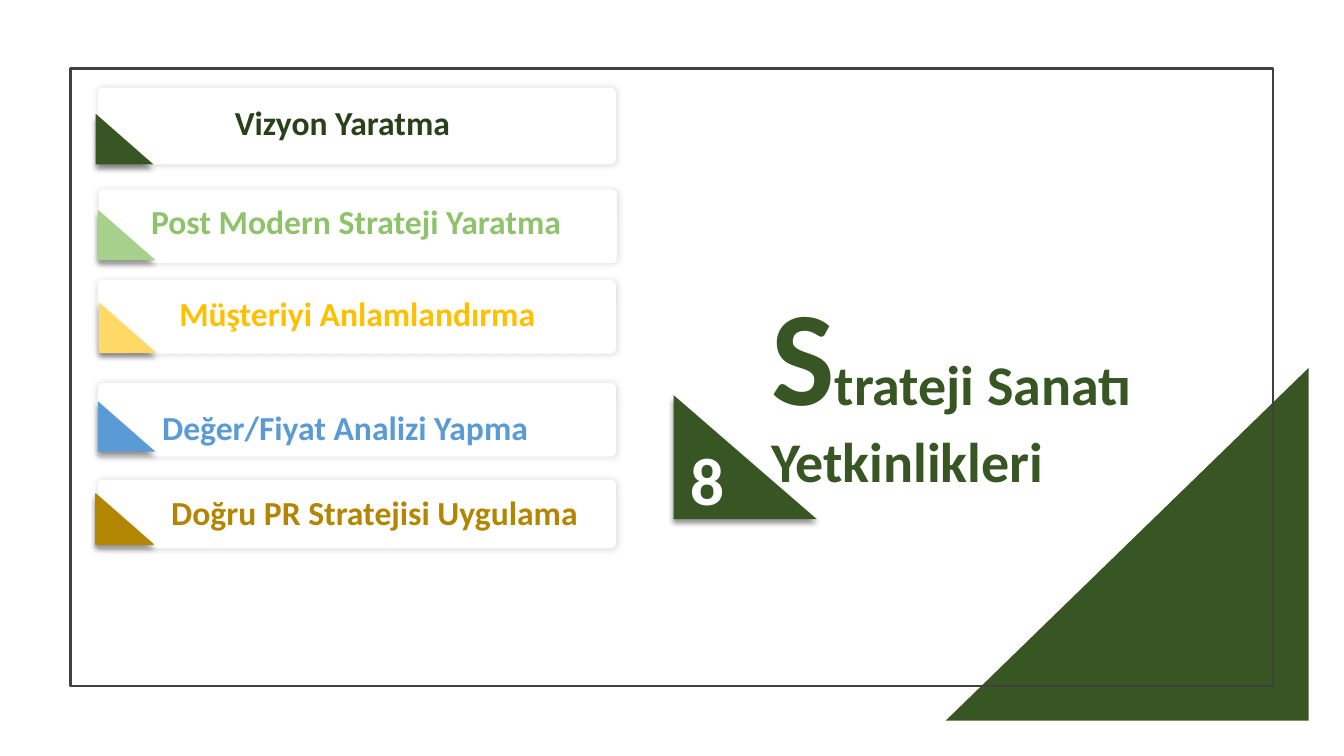
from lxml.etree import SubElement
from pptx import Presentation
from pptx.dml.color import RGBColor
from pptx.enum.shapes import MSO_SHAPE
from pptx.enum.text import MSO_ANCHOR
from pptx.oxml.ns import qn
from pptx.util import Inches, Pt

COLORS = {
    "white": "FFFFFF", "frame": "404040", "shadow": "000000",
    "forest": "375623", "dark_forest": "29401B",
    "light_green": "A8D08D", "green": "8EC36B",
    "light_yellow": "FFD965", "yellow": "FFC000",
    "blue": "5B9BD5", "ochre": "B28600",
}
BAR_GLOW = (14, 5, 0, 0)
DROP_SHADOW = (43, 4, 3, 90)
BAR_LEFT, BAR_WIDTH = 0.97, 5.14
CORNER_WIDTH, CORNER_HEIGHT = 0.57, 0.5

# label, text colour, corner colour, bar (left, top, height), corner (left, top), text (left, top, width)
SKILLS = [
    ("Vizyon Yaratma", "dark_forest", "forest",
     (0.97, 0.87, 0.76), (0.95, 1.13), (2.23, 0.96, 3.38)),
    ("Post Modern Strateji Yaratma", "green", "light_green",
     (0.98, 1.88, 0.73), (0.97, 2.08), (1.4, 1.94, 5.14)),
    ("Müşteriyi Anlamlandırma", "yellow", "light_yellow",
     (0.97, 2.78, 0.73), (0.98, 3.0), (1.68, 2.86, 4.1)),
    ("Değer/Fiyat Analizi Yapma", "blue", "blue",
     (0.97, 3.8, 0.73), (0.97, 3.98), (1.51, 3.99, 4.74)),
    ("Doğru PR Stratejisi Uygulama", "ochre", "ochre",
     (0.97, 4.76, 0.68), (0.95, 4.9), (1.6, 4.83, 4.4)),
]


def rgb(color):
    """Return the named colour."""
    return RGBColor.from_string(COLORS[color])


def add_shadow(shape, alpha, blur, distance, angle):
    """Give a shape an outer shadow, in percent, points and degrees."""
    effects = shape._element.spPr.find(qn("a:effectLst"))
    shadow = SubElement(effects, qn("a:outerShdw"), blurRad=str(Pt(blur)),
                        dist=str(Pt(distance)), dir=str(angle * 60000),
                        algn="ctr", rotWithShape="0")
    shade = SubElement(shadow, qn("a:srgbClr"), val=COLORS["shadow"])
    SubElement(shade, qn("a:alpha"), val=str(alpha * 1000))


def add_figure(slide, preset, box, fill=None, line=None, line_width=0.75, shadow=None):
    """Add a preset shape in the given box."""
    figure = slide.shapes.add_shape(preset, *map(Inches, box))
    figure.shadow.inherit = False
    if fill:
        figure.fill.solid()
        figure.fill.fore_color.rgb = rgb(fill)
    else:
        figure.fill.background()
    if line:
        figure.line.color.rgb = rgb(line)
        figure.line.width = Pt(line_width)
    else:
        figure.line.fill.background()
    if shadow:
        add_shadow(figure, *shadow)
    return figure


def add_text(slide, box, runs, color, anchor=MSO_ANCHOR.TOP, spacing=1.0):
    """Add one bold paragraph made of (text, size) runs."""
    frame = slide.shapes.add_textbox(*map(Inches, box)).text_frame
    frame.word_wrap = True
    frame.vertical_anchor = anchor
    paragraph = frame.paragraphs[0]
    paragraph.line_spacing = spacing
    for text, size in runs:
        run = paragraph.add_run()
        run.text = text
        run.font.name = "Calibri"
        run.font.size = Pt(size)
        run.font.bold = True
        run.font.color.rgb = rgb(color)


def add_backdrop(slide, left, top, width, height):
    """Draw the large corner triangle and the thin frame in the box."""
    corner = add_figure(slide, MSO_SHAPE.RIGHT_TRIANGLE,
                        (left + width - 3.25, top + height - 3.16, 3.6, 3.5), "forest")
    corner._element.spPr.xfrm.set("flipH", "1")
    add_figure(slide, MSO_SHAPE.RECTANGLE, (left, top, width, height),
               line="frame", line_width=1.5)


def add_skill(slide, label, text_color, corner_color, bar, corner, text):
    """Draw one skill bar with its corner triangle and label."""
    left, top, height = bar
    card = add_figure(slide, MSO_SHAPE.ROUNDED_RECTANGLE,
                      (left, top, BAR_WIDTH, height), "white", shadow=BAR_GLOW)
    card.adjustments[0] = 0.073
    add_figure(slide, MSO_SHAPE.RIGHT_TRIANGLE,
               (*corner, CORNER_WIDTH, CORNER_HEIGHT), corner_color,
               line="ochre" if corner_color == "ochre" else None, shadow=DROP_SHADOW)
    add_text(slide, (*text, 0.5), [(label, 24)], text_color)


def add_heading(slide, left, top, width, height):
    """Draw the slide title and its numbered triangle in the box."""
    add_text(slide, (left + 0.87, top, width - 0.87, height),
             [("S", 96), ("trateji Sanatı Yetkinlikleri", 40)],
             "forest", MSO_ANCHOR.BOTTOM, 0.9)
    add_figure(slide, MSO_SHAPE.RIGHT_TRIANGLE, (left, top + 0.92, 1.42, 1.23),
               "forest", shadow=DROP_SHADOW)
    add_text(slide, (left + 0.07, top + 1.3, 0.6, 0.91), [("8", 48)], "white")


def main():
    """Build and save the slide."""
    deck = Presentation()
    deck.slide_width, deck.slide_height = Inches(13.33), Inches(7.5)
    slide = deck.slides.add_slide(deck.slide_layouts[6])
    add_backdrop(slide, 0.7, 0.68, 11.93, 6.13)
    for skill in SKILLS:
        add_skill(slide, *skill)
    add_heading(slide, 6.68, 3.0, 4.85, 1.96)
    deck.save("out.pptx")


if __name__ == "__main__":
    main()
